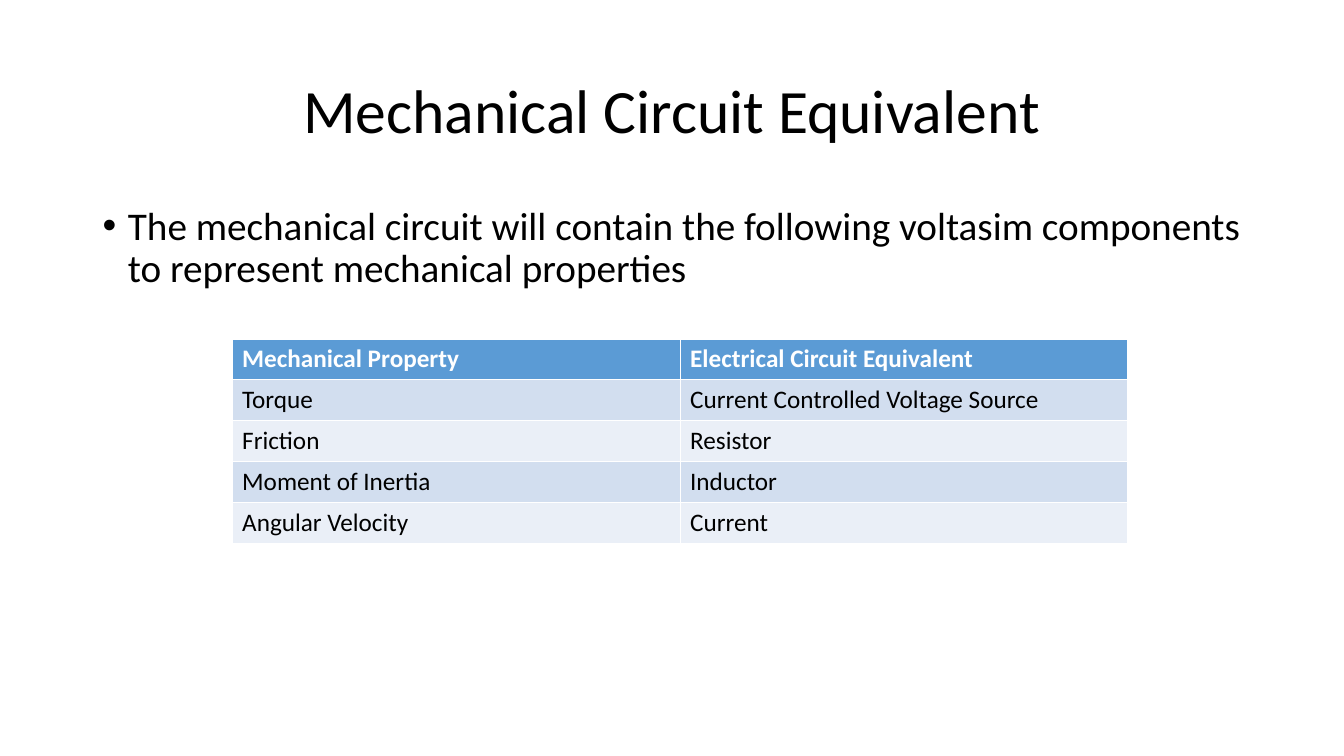
"""Build a slide that pairs mechanical properties with circuit parts."""
from pptx import Presentation
from pptx.dml.color import RGBColor
from pptx.enum.text import MSO_ANCHOR, MSO_AUTO_SIZE, PP_ALIGN
from pptx.util import Cm, Pt

MIDDLE, TOP = MSO_ANCHOR.MIDDLE, MSO_ANCHOR.TOP
CENTER, LEFT = PP_ALIGN.CENTER, PP_ALIGN.LEFT
NO_FIT = MSO_AUTO_SIZE.NONE
HEAD, BANDS = "5B9BD5", ("EAEFF7", "D2DEEF")
ROWS = [
    ("Mechanical Property", "Electrical Circuit Equivalent"),
    ("Torque", "Current Controlled Voltage Source"),
    ("Friction", "Resistor"),
    ("Moment of Inertia", "Inductor"),
    ("Angular Velocity", "Current"),
]


def style(para, size, color="000000", bold=False):
    """Set the font of a paragraph."""
    font = para.font
    font.name, font.size, font.bold = "Calibri", Pt(size), bold
    font.color.rgb = RGBColor.from_string(color)


def place(holder, top, height, text, size, anchor, align):
    """Move and fill a placeholder, and return its paragraph."""
    holder.left, holder.top = Cm(2.33), Cm(top)
    holder.width, holder.height = Cm(29.21), Cm(height)
    frame = holder.text_frame
    frame.text = text
    frame.auto_size, frame.vertical_anchor = NO_FIT, anchor
    para = frame.paragraphs[0]
    para.alignment, para.line_spacing = align, 0.9
    style(para, size)
    return para


deck = Presentation()
deck.slide_width, deck.slide_height = Cm(33.87), Cm(19.05)
slide = deck.slides.add_slide(deck.slide_layouts[1])
title, body = slide.placeholders

place(title, 1.01, 3.68, "Mechanical Circuit Equivalent", 44, MIDDLE, CENTER)
point = place(
    body, 5.07, 12.09,
    "The mechanical circuit will contain the following voltasim "
    "components to represent mechanical properties",
    28, TOP, LEFT)
point.space_before = Pt(10)
props = point._p.get_or_add_pPr()
props.set("marL", str(Cm(0.64)))
props.set("indent", str(Cm(-0.64)))

table = slide.shapes.add_table(
    len(ROWS), 2, Cm(5.85), Cm(8.54), Cm(22.58), Cm(5.15)).table
for r, row in enumerate(ROWS):
    for c, text in enumerate(row):
        cell = table.cell(r, c)
        cell.text = text
        cell.fill.solid()
        shade = BANDS[r % 2] if r else HEAD
        cell.fill.fore_color.rgb = RGBColor.from_string(shade)
        ink = "000000" if r else "FFFFFF"
        style(cell.text_frame.paragraphs[0], 18, ink, r == 0)

deck.save("out.pptx")
